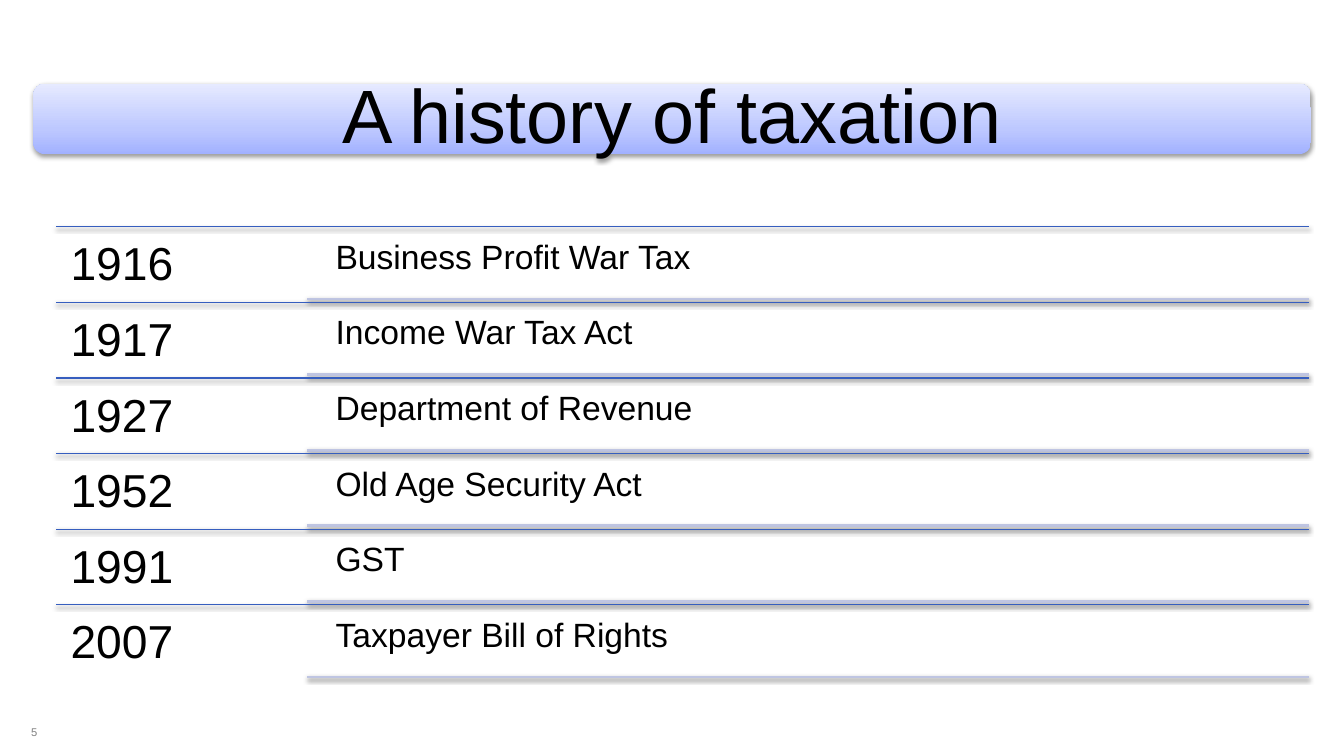
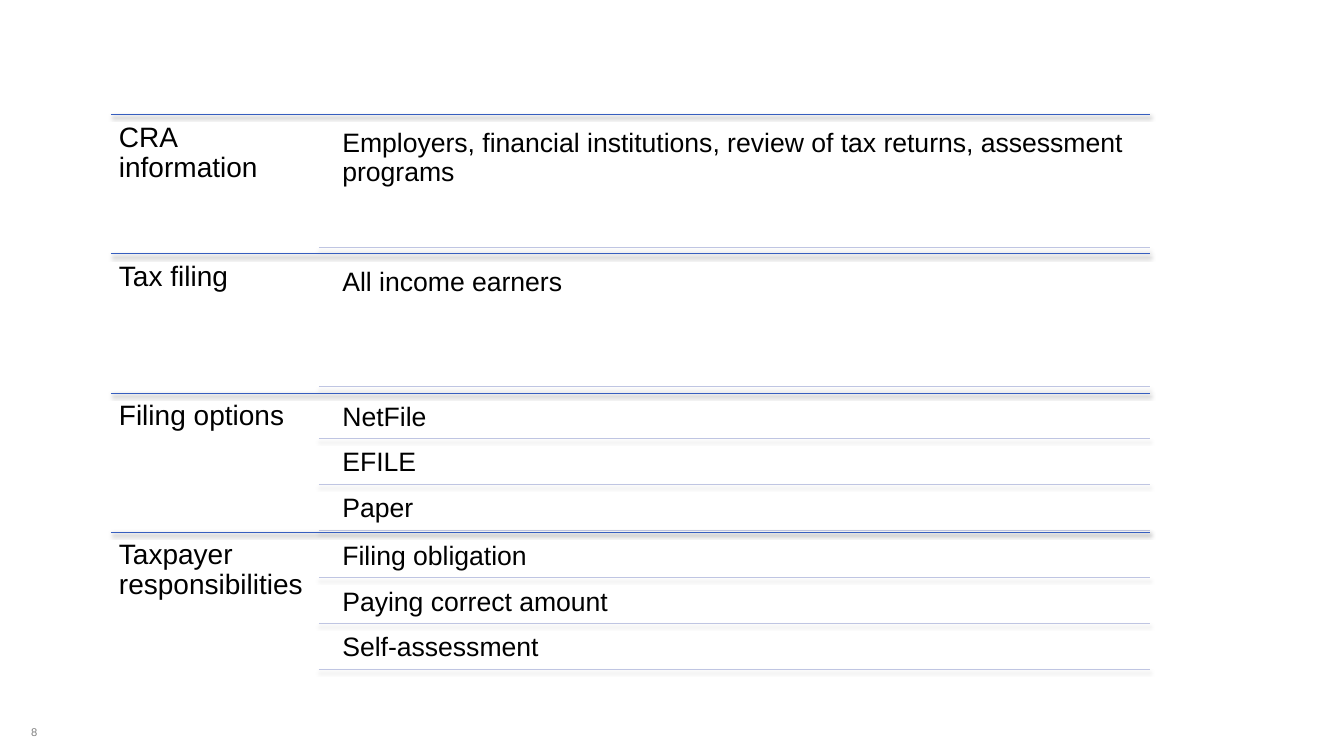
"""Build two outline slides: a history of taxation and how tax filing works."""
import dataclasses

import lxml.etree
import pptx
import pptx.dml.color
import pptx.enum.shapes
import pptx.enum.text
import pptx.oxml.ns
import pptx.util


@dataclasses.dataclass(frozen=True)
class Theme:
    font: str = "Arial"
    text: str = "000000"
    muted: str = "808080"
    row_rule: str = "365EBF"
    item_rule: str = "BFC5E2"
    band: tuple = ((0, "A2B1FF"), (35, "BDC8FF"), (100, "E6EAFF"))
    title_size: int = 54
    number_size: int = 8
    rule_width: float = 0.75


@dataclasses.dataclass(frozen=True)
class OutlineStyle:
    label_size: int
    item_size: int
    label_inset: float
    item_inset: float
    item_rule_width: float


THEME = Theme()
WIDTH = pptx.util.Inches(13.33)
HEIGHT = pptx.util.Inches(7.5)
LABEL_SHARE = 0.2
INDENT_SHARE = 0.02 * 0.75
GAP_SHARE = 0.05

TIMELINE_STYLE = OutlineStyle(33, 24, 0.14, 0.1, 2)
FILING_STYLE = OutlineStyle(20, 19, 0.08, 0.08, THEME.rule_width)

TIMELINE = [
    ("1916", ["Business Profit War Tax"]),
    ("1917", ["Income War Tax Act"]),
    ("1927", ["Department of Revenue"]),
    ("1952", ["Old Age Security Act"]),
    ("1991", ["GST"]),
    ("2007", ["Taxpayer Bill of Rights"]),
]
FILING = [
    ("CRA information", ["Employers, financial institutions, review of tax returns, "
                         "assessment programs"]),
    ("Tax filing", ["All income earners"]),
    ("Filing options", ["NetFile", "EFILE", "Paper"]),
    ("Taxpayer responsibilities", ["Filing obligation", "Paying correct amount",
                                   "Self-assessment"]),
]


def rgb(value):
    return pptx.dml.color.RGBColor.from_string(value)


def area(left, top, width, height):
    return (int(WIDTH * left / 100), int(HEIGHT * top / 100),
            int(WIDTH * width / 100), int(HEIGHT * height / 100))


def child(parent, tag, **attributes):
    return lxml.etree.SubElement(parent, pptx.oxml.ns.qn(tag), attributes)


def add_shadow(sp):
    effects = child(sp._element.spPr, "a:effectLst")
    shadow = child(effects, "a:outerShdw", blurRad=str(pptx.util.Pt(3.1)),
                   dist=str(pptx.util.Pt(1.6)), dir="5400000", rotWithShape="0")
    color = child(shadow, "a:srgbClr", val="000000")
    child(color, "a:alpha", val="38000")


def write(tf, text, size, color=THEME.text, spacing=0.9, align=None, insets=(0.1, 0.05)):
    tf.word_wrap = True
    tf.margin_left = tf.margin_right = pptx.util.Inches(insets[0])
    tf.margin_top = tf.margin_bottom = pptx.util.Inches(insets[1])
    p = tf.paragraphs[0]
    p.text = text
    p.alignment = align
    p.line_spacing = spacing
    p.font.name = THEME.font
    p.font.size = pptx.util.Pt(size)
    p.font.color.rgb = rgb(color)


def add_text(s, box, text, size, **options):
    write(s.shapes.add_textbox(*map(int, box)).text_frame, text, size, **options)


def add_rule(s, left, right, y, color, width):
    line = s.shapes.add_connector(pptx.enum.shapes.MSO_CONNECTOR.STRAIGHT,
                                  int(left), int(y), int(right), int(y))
    line.line.color.rgb = rgb(color)
    line.line.width = pptx.util.Pt(width)
    add_shadow(line)


def add_title_band(s, box, text):
    sp = s.shapes.add_shape(pptx.enum.shapes.MSO_SHAPE.ROUNDED_RECTANGLE, *box)
    sp.fill.gradient()
    sp.fill.gradient_angle = 90
    stops = sp._element.spPr.find(".//" + pptx.oxml.ns.qn("a:gsLst"))
    stops.clear()
    for position, color in THEME.band:
        stop = child(stops, "a:gs", pos=str(position * 1000))
        child(stop, "a:srgbClr", val=color)
    sp.line.fill.background()
    add_shadow(sp)
    sp.text_frame.vertical_anchor = pptx.enum.text.MSO_ANCHOR.MIDDLE
    write(sp.text_frame, text, THEME.title_size,
          align=pptx.enum.text.PP_ALIGN.CENTER, insets=(0.23, 0.11))


def add_outline(s, box, rows, style):
    left, top, width, height = box
    right = left + width
    split = left + width * LABEL_SHARE
    indent = split + width * INDENT_SHARE
    row_height = height / len(rows)
    for i, (label, items) in enumerate(rows):
        y = top + i * row_height
        add_rule(s, left, right, y, THEME.row_rule, THEME.rule_width)
        add_text(s, (left, y, split - left, row_height), label, style.label_size,
                 insets=(style.label_inset,) * 2)
        item_height = row_height / (len(items) + GAP_SHARE * (len(items) + 1))
        gap = item_height * GAP_SHARE
        for j, item in enumerate(items):
            item_top = y + gap + j * (item_height + gap)
            add_text(s, (indent, item_top, right - indent, item_height), item,
                     style.item_size, insets=(style.item_inset,) * 2)
            add_rule(s, split, right, item_top + item_height, THEME.item_rule,
                     style.item_rule_width)


def add_slide(prs, number):
    s = prs.slides.add_slide(prs.slide_layouts[6])
    add_text(s, area(1.58, 95.47, 5.03, 3.07), str(number), THEME.number_size,
             color=THEME.muted, spacing=0.95)
    return s


def main():
    prs = pptx.Presentation()
    prs.slide_width, prs.slide_height = WIDTH, HEIGHT

    s = add_slide(prs, 5)
    add_outline(s, area(4.2, 30, 93.18, 60), TIMELINE, TIMELINE_STYLE)
    add_title_band(s, area(2.48, 11.07, 95.05, 9.33), "A history of taxation")

    s = add_slide(prs, 8)
    add_outline(s, area(8.25, 15.2, 77.34, 73.6), FILING, FILING_STYLE)

    prs.save("out.pptx")


if __name__ == "__main__":
    main()
